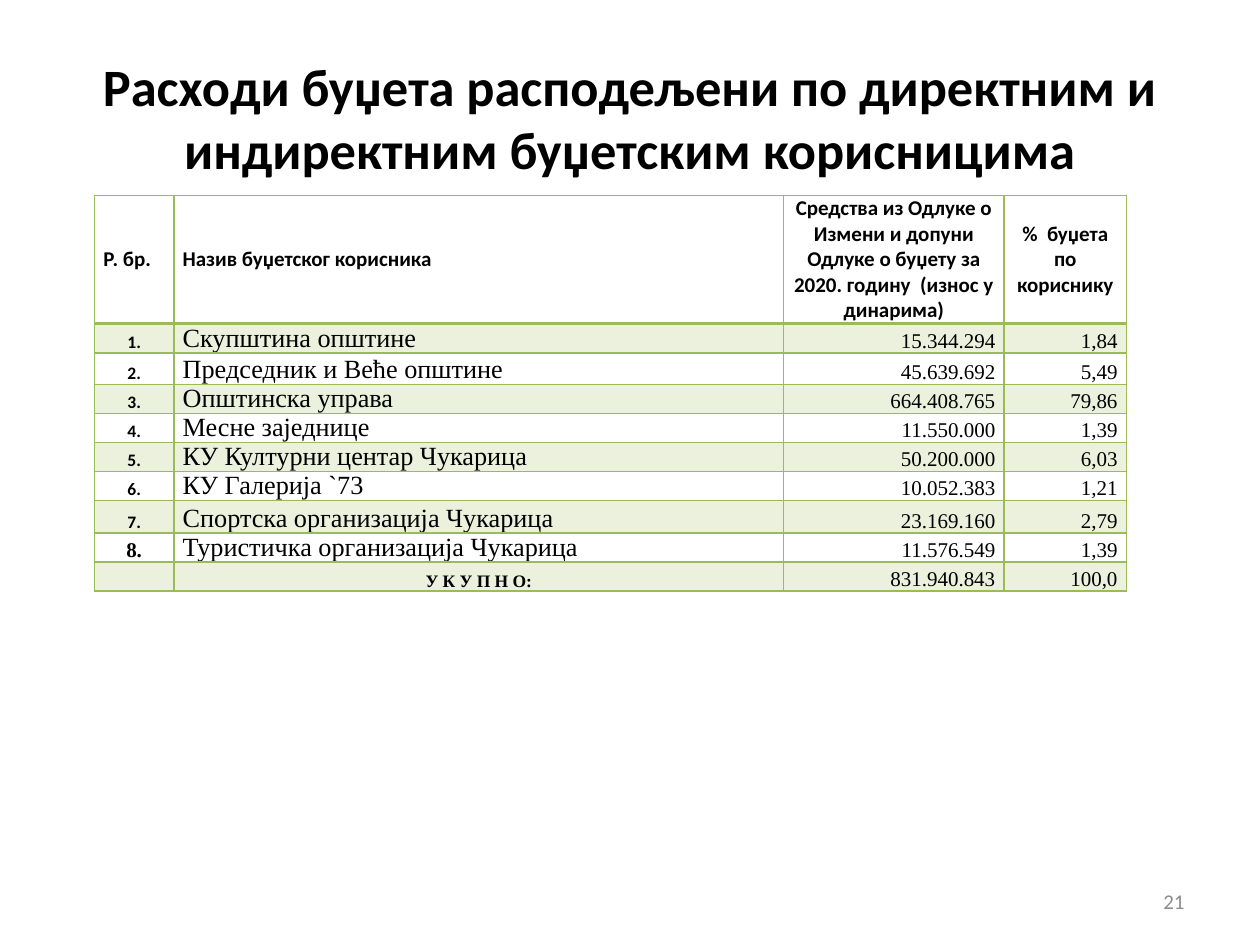
from dataclasses import dataclass

import lxml.etree
import pptx
import pptx.dml.color
import pptx.enum.text
import pptx.oxml.ns
import pptx.util

SLIDE_WIDTH = pptx.util.Inches(10)
SLIDE_HEIGHT = pptx.util.Inches(7.5)
GREEN, BLACK, GREY = "9BBB59", "000000", "8C8C8C"
SANS, SERIF = "Calibri", "Times New Roman"
ALIGN = pptx.enum.text.PP_ALIGN
ANCHOR = pptx.enum.text.MSO_ANCHOR


@dataclass(frozen=True)
class Style:
    font: str
    size: float
    bold: bool = False
    align: ALIGN = ALIGN.LEFT
    color: str = BLACK


@dataclass(frozen=True)
class Column:
    heading: str
    width: float  # percent of the slide's width
    heading_style: Style
    body_style: Style


@dataclass(frozen=True)
class BudgetUser:
    number: str
    name: str
    amount: str
    percent: str
    height: float = 3.07  # percent of the slide's height


TITLE = Style(SANS, 30, True, ALIGN.CENTER)
PAGE_NUMBER = Style(SANS, 12, align=ALIGN.RIGHT, color=GREY)
HEADING = Style(SANS, 12, True)
CENTERED_HEADING = Style(SANS, 12, True, ALIGN.CENTER)
NUMBER = Style(SANS, 10, True, ALIGN.CENTER)
FIGURE = Style(SERIF, 12, align=ALIGN.RIGHT)

COLUMNS = [
    Column("Р. бр.", 6.3, HEADING, NUMBER),
    Column("Назив буџетског корисника", 48.4, HEADING, Style(SERIF, 15)),
    Column("Средства из Одлуке о Измени и допуни Одлуке о буџету за 2020. годину  (износ у динарима)",
           17.5, CENTERED_HEADING, FIGURE),
    Column("%  буџета по кориснику", 9.7, CENTERED_HEADING, FIGURE),
]
HEADER_HEIGHT = 13.6
USERS = [
    BudgetUser("1.", "Скупштина општине", "15.344.294", "1,84"),
    BudgetUser("2.", "Председник и Веће општине", "45.639.692", "5,49", 3.33),
    BudgetUser("3.", "Општинска управа", "664.408.765", "79,86"),
    BudgetUser("4.", "Месне заједнице", "11.550.000", "1,39"),
    BudgetUser("5.", "КУ Културни центар Чукарица", "50.200.000", "6,03"),
    BudgetUser("6.", "КУ Галерија `73", "10.052.383", "1,21"),
    BudgetUser("7.", "Спортска организација Чукарица", "23.169.160", "2,79", 3.47),
    BudgetUser("8.", "Туристичка организација Чукарица", "11.576.549", "1,39"),
    BudgetUser("", "У К У П Н О:", "831.940.843", "100,0"),
]
# Cells that differ from their column, by table row and column
SPECIAL_STYLES = {
    (8, 0): Style(SERIF, 12, True, ALIGN.CENTER),
    (9, 1): Style(SERIF, 10, True, ALIGN.CENTER),
}


def across(percent: float) -> int:
    return round(SLIDE_WIDTH * percent / 100)


def down(percent: float) -> int:
    return round(SLIDE_HEIGHT * percent / 100)


def rgb(color: str) -> pptx.dml.color.RGBColor:
    return pptx.dml.color.RGBColor.from_string(color)


def add_child(parent, tag: str, **attributes: str):
    return lxml.etree.SubElement(parent, pptx.oxml.ns.qn(tag), **attributes)


def write(frame, text: str, style: Style) -> None:
    frame.word_wrap = True
    paragraph = frame.paragraphs[0]
    paragraph.text = text
    paragraph.alignment = style.align
    font = paragraph.font
    font.name, font.size, font.bold = style.font, pptx.util.Pt(style.size), style.bold
    font.color.rgb = rgb(style.color)
    if not text:
        # An empty cell takes its line height from the end mark
        add_child(paragraph._p, "a:endParaRPr", sz=str(round(style.size * 100)))


def draw_borders(cell, top: float, bottom: float) -> None:
    properties = cell._tc.get_or_add_tcPr()
    for side, points in (("L", 1), ("R", 1), ("T", top), ("B", bottom)):
        line = add_child(properties, f"a:ln{side}", w=str(pptx.util.Pt(points)))
        add_child(add_child(line, "a:solidFill"), "a:srgbClr", val=GREEN)


def shade(cell, shaded: bool) -> None:
    if not shaded:
        cell.fill.background()
        return
    cell.fill.solid()
    cell.fill.fore_color.rgb = rgb(GREEN)
    fill = cell._tc.tcPr.find(pptx.oxml.ns.qn("a:solidFill"))
    add_child(fill[0], "a:alpha", val="20000")


def fill_cell(cell, text: str, style: Style, row: int) -> None:
    cell.margin_left = cell.margin_right = pptx.util.Inches(0.07)
    cell.margin_top = cell.margin_bottom = 0
    cell.vertical_anchor = ANCHOR.BOTTOM if row else ANCHOR.MIDDLE
    write(cell.text_frame, text, style)
    draw_borders(cell, top=2 if row == 1 else 1, bottom=1 if row else 2)
    shade(cell, row % 2 == 1)


def add_budget_table(slide) -> None:
    heights = [HEADER_HEIGHT] + [user.height for user in USERS]
    table = slide.shapes.add_table(
        len(heights), len(COLUMNS), across(7.5), down(20.67),
        across(sum(column.width for column in COLUMNS)), down(sum(heights))).table
    table.first_row = table.horz_banding = False
    for row, height in enumerate(heights):
        table.rows[row].height = down(height)
    for index, column in enumerate(COLUMNS):
        table.columns[index].width = across(column.width)
        fill_cell(table.cell(0, index), column.heading, column.heading_style, 0)
    for row, user in enumerate(USERS, 1):
        values = (user.number, user.name, user.amount, user.percent)
        for index, (column, value) in enumerate(zip(COLUMNS, values)):
            style = SPECIAL_STYLES.get((row, index), column.body_style)
            fill_cell(table.cell(row, index), value, style, row)


def main() -> None:
    deck = pptx.Presentation()
    deck.slide_width, deck.slide_height = SLIDE_WIDTH, SLIDE_HEIGHT
    slide = deck.slides.add_slide(deck.slide_layouts[5])

    title = slide.shapes.title
    title.left, title.top = across(5), down(4)
    title.width, title.height = across(90), down(16.67)
    title.text_frame.vertical_anchor = ANCHOR.MIDDLE
    write(title.text_frame, "Расходи буџета расподељени по директним и индиректним буџетским корисницима", TITLE)

    add_budget_table(slide)

    page_number = slide.shapes.add_textbox(across(71.7), down(92.67), across(23.3), down(5.33))
    page_number.text_frame.vertical_anchor = ANCHOR.MIDDLE
    write(page_number.text_frame, "21", PAGE_NUMBER)
    deck.save("out.pptx")


if __name__ == "__main__":
    main()
